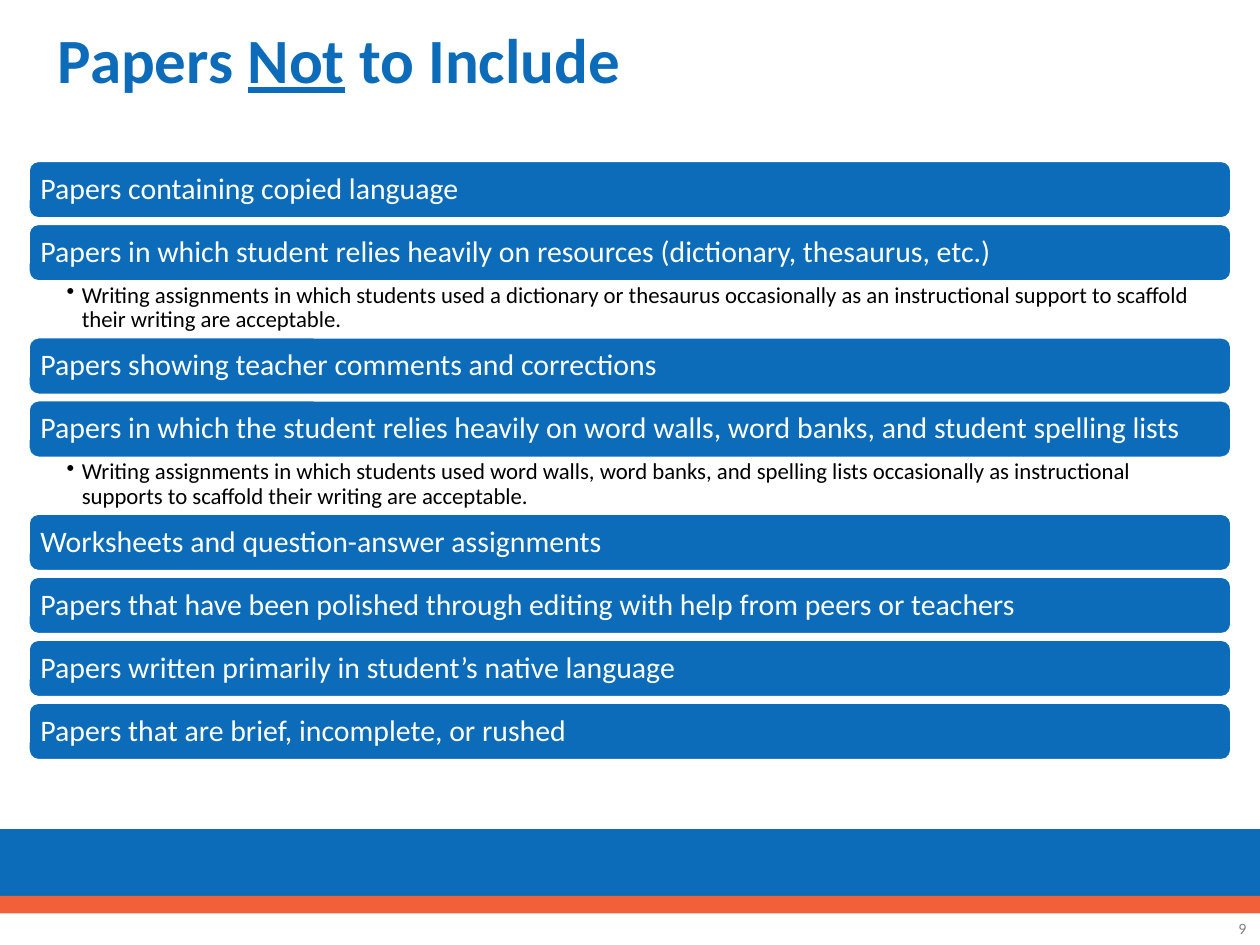
import pptx
import pptx.dml.color
import pptx.enum.shapes
import pptx.enum.text
import pptx.oxml
import pptx.oxml.ns
import pptx.util

BLUE = pptx.dml.color.RGBColor(0x0D, 0x6C, 0xB9)
ORANGE = pptx.dml.color.RGBColor(0xF1, 0x60, 0x38)
WHITE = pptx.dml.color.RGBColor(0xFF, 0xFF, 0xFF)
BLACK = pptx.dml.color.RGBColor(0x00, 0x00, 0x00)
GRAY = pptx.dml.color.RGBColor(0x80, 0x80, 0x80)

FONT = "Calibri"
SLIDE_WIDTH, SLIDE_HEIGHT = 10, 7.5
LIST_LEFT, LIST_TOP = 0.23, 1.28
LIST_WIDTH = SLIDE_WIDTH - 2 * LIST_LEFT
ROW_HEIGHT, ROW_GAP = 0.45, 0.05

RULES = [
    ("Papers containing copied language", None),
    ("Papers in which student relies heavily on resources (dictionary, thesaurus, etc.)",
     "Writing assignments in which students used a dictionary or thesaurus occasionally "
     "as an instructional support to scaffold their writing are acceptable."),
    ("Papers showing teacher comments and corrections", None),
    ("Papers in which the student relies heavily on word walls, word banks, and student spelling lists",
     "Writing assignments in which students used word walls, word banks, and spelling lists "
     "occasionally as instructional supports to scaffold their writing are acceptable."),
    ("Worksheets and question-answer assignments", None),
    ("Papers that have been polished through editing with help from peers or teachers", None),
    ("Papers written primarily in student’s native language", None),
    ("Papers that are brief, incomplete, or rushed", None),
]


def inches(*lengths):
    return [pptx.util.Inches(length) for length in lengths]


def style_font(font, size, color, bold=False):
    font.name = FONT
    font.size = pptx.util.Pt(size)
    font.color.rgb = color
    font.bold = bold


def set_frame(frame, margins, anchor):
    frame.word_wrap = True
    frame.vertical_anchor = anchor
    (frame.margin_left, frame.margin_top,
     frame.margin_right, frame.margin_bottom) = inches(*margins)


def add_panel(slide, kind, box, fill):
    panel = slide.shapes.add_shape(kind, *inches(*box))
    panel.shadow.inherit = False
    panel.fill.solid()
    panel.fill.fore_color.rgb = fill
    panel.line.fill.background()
    return panel


def add_text(slide, box, text, margins, anchor):
    frame = slide.shapes.add_textbox(*inches(*box)).text_frame
    set_frame(frame, margins, anchor)
    frame.text = text
    return frame.paragraphs[0]


def add_title(slide):
    title = add_text(slide, (0.36, 0.21, 9.3, 0.58), "", (0.1, 0.05, 0.1, 0.05),
                     pptx.enum.text.MSO_ANCHOR.MIDDLE)
    title.line_spacing = 0.9
    for words, underlined in (("Papers ", False), ("Not", True), (" to Include", False)):
        run = title.add_run()
        run.text = words
        style_font(run.font, 36, BLUE, bold=True)
        run.font.underline = underlined


def add_rule(slide, top, text):
    bar = add_panel(slide, pptx.enum.shapes.MSO_SHAPE.ROUNDED_RECTANGLE,
                    (LIST_LEFT, top, LIST_WIDTH, ROW_HEIGHT), BLUE)
    bar.line.color.rgb = WHITE
    bar.line.width = pptx.util.Pt(1)
    set_frame(bar.text_frame, (0.07, 0.07, 0.07, 0.07), pptx.enum.text.MSO_ANCHOR.MIDDLE)
    bar.text_frame.text = text
    rule = bar.text_frame.paragraphs[0]
    rule.alignment = pptx.enum.text.PP_ALIGN.LEFT
    rule.line_spacing = 0.9
    style_font(rule.runs[0].font, 17, WHITE)


def add_exception(slide, top, text):
    exception = add_text(slide, (LIST_LEFT, top, LIST_WIDTH, ROW_HEIGHT), text,
                         (0.3, 0.02, 0.13, 0.02), pptx.enum.text.MSO_ANCHOR.TOP)
    exception.level = 1
    exception.line_spacing = 0.9
    properties = exception._p.get_or_add_pPr()
    indent = pptx.util.Inches(0.12)
    properties.set("marL", str(indent))
    properties.set("indent", str(-indent))
    bullet = pptx.oxml.parse_xml(f'<a:buChar {pptx.oxml.ns.nsdecls("a")} char="•"/>')
    properties.append(bullet)
    style_font(exception.runs[0].font, 13, BLACK)


def add_rules(slide):
    top = LIST_TOP
    for rule, exception in RULES:
        add_rule(slide, top, rule)
        top += ROW_HEIGHT
        if exception:
            add_exception(slide, top, exception)
            top += ROW_HEIGHT
        else:
            top += ROW_GAP


def add_footer(slide):
    rectangle = pptx.enum.shapes.MSO_SHAPE.RECTANGLE
    add_panel(slide, rectangle, (0, 6.58, SLIDE_WIDTH, 0.58), BLUE)
    add_panel(slide, rectangle, (0, 7.11, SLIDE_WIDTH, 0.14), ORANGE)
    number = add_text(slide, (9.6, 7.24, 0.39, 0.26), "9", (0.1, 0.05, 0.1, 0.05),
                      pptx.enum.text.MSO_ANCHOR.MIDDLE)
    number.alignment = pptx.enum.text.PP_ALIGN.RIGHT
    style_font(number.runs[0].font, 9, GRAY)


def main():
    deck = pptx.Presentation()
    deck.slide_width, deck.slide_height = inches(SLIDE_WIDTH, SLIDE_HEIGHT)
    slide = deck.slides.add_slide(deck.slide_layouts[6])
    add_footer(slide)
    add_title(slide)
    add_rules(slide)
    deck.save("out.pptx")


if __name__ == "__main__":
    main()
